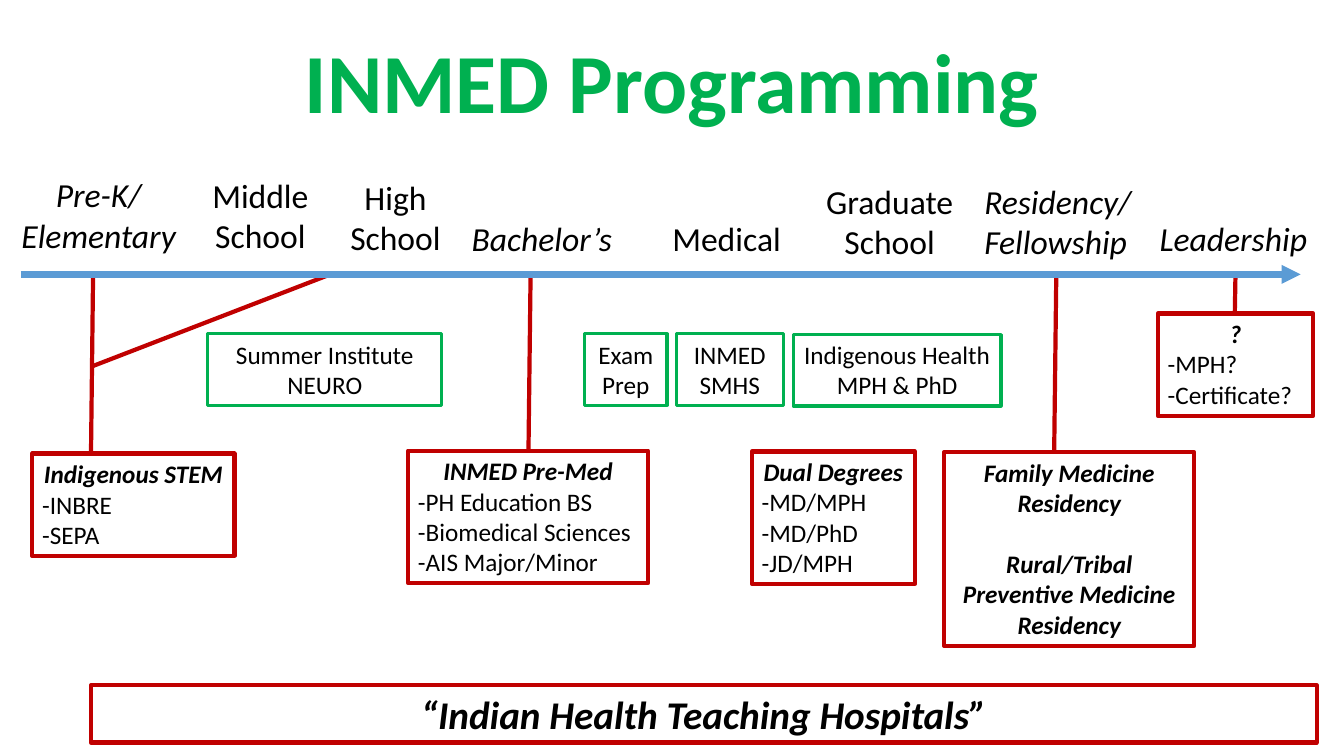
from lxml.etree import SubElement
from pptx import Presentation
from pptx.dml.color import RGBColor
from pptx.enum.shapes import MSO_CONNECTOR, MSO_SHAPE
from pptx.enum.text import MSO_ANCHOR, PP_ALIGN
from pptx.oxml.ns import qn
from pptx.util import Pt

GREEN, RED, BLUE, BLACK, WHITE = "00B050", "C00000", "5B9BD5", "000000", "FFFFFF"
CENTER, LEFT = PP_ALIGN.CENTER, PP_ALIGN.LEFT
AXIS_Y = 196

# Career stages above the axis: text, left, top, width, italic, alignment
STAGES = [
    ("Pre-K/ Elementary", 6.5, 121, 128, True, CENTER),
    ("Middle School", 137.5, 121.5, 97, False, CENTER),
    ("High School", 241, 122.5, 83, False, CENTER),
    ("Bachelor’s", 327, 152, 120, True, CENTER),
    ("Medical", 464, 152, 110, False, CENTER),
    ("Graduate School", 582.5, 125.5, 106, False, CENTER),
    ("Residency/Fellowship", 696, 125.5, 128, True, LEFT),
    ("Leadership", 816, 152, 130, True, CENTER),
]

# Existing programs in green: lines, left, top, width
PROGRAMS = [
    (["Summer Institute", "NEURO"], 148.5, 238.5, 167),
    (["Exam", "Prep"], 417.5, 238.5, 59),
    (["INMED", "SMHS"], 483, 238.5, 76.5),
    (["Indigenous Health MPH & PhD"], 566.5, 239, 148.5),
]

# Tracks in red: heading, items, left, top, width, height
TRACKS = [
    ("Indigenous STEM", ["-INBRE", "-SEPA"], 23, 324, 144.5, 73),
    ("INMED Pre-Med", ["-PH Education BS", "-Biomedical Sciences", "-AIS Major/Minor"],
     291.5, 322, 171.5, 94.5),
    ("Dual Degrees", ["-MD/MPH", "-MD/PhD", "-JD/MPH"], 537, 322.5, 116.5, 94.5),
    ("?", ["-MPH?", "-Certificate?"], 827, 224, 111, 73),
]

# Red links from the boxes up to the axis: x1, y1, x2, y2
LINKS = [
    (65, 323.5, 66.5, 197),
    (65, 262, 236, 196),
    (377.5, 322, 379, 196),
    (753, 322.5, 754.5, 196.5),
    (882, 224.5, 882.5, 197),
]


def rgb(color):
    return RGBColor.from_string(color)


def write(tf, lines, size, color=BLACK, bold=False, italic=False, align=CENTER):
    tf.word_wrap = True
    tf.text = "\n".join(lines)
    for p in tf.paragraphs:
        p.alignment = align
        for r in p.runs:
            font = r.font
            font.name, font.size = "Calibri", Pt(size)
            font.bold, font.italic = bold, italic
            font.color.rgb = rgb(color)


def add_label(s, text, left, top, width, height, size, **style):
    sp = s.shapes.add_textbox(Pt(left), Pt(top), Pt(width), Pt(height))
    write(sp.text_frame, [text], size, **style)
    return sp.text_frame


def add_box(s, lines, left, top, width, height, color, weight, size=18, **style):
    sp = s.shapes.add_shape(MSO_SHAPE.RECTANGLE, Pt(left), Pt(top), Pt(width), Pt(height))
    sp.shadow.inherit = False
    sp.fill.background()
    sp.line.color.rgb = rgb(color)
    sp.line.width = Pt(weight)
    tf = sp.text_frame
    tf.vertical_anchor = MSO_ANCHOR.TOP
    write(tf, lines, size, **style)
    return sp


def add_track(s, heading, items, left, top, width, height):
    sp = add_box(s, [heading] + items, left, top, width, height, RED, 3)
    heading_p, *item_ps = sp.text_frame.paragraphs
    for r in heading_p.runs:
        r.font.bold = r.font.italic = True
    for p in item_ps:
        p.alignment = LEFT


def add_line(s, x1, y1, x2, y2, color, weight, arrow=False):
    line = s.shapes.add_connector(MSO_CONNECTOR.STRAIGHT, Pt(x1), Pt(y1), Pt(x2), Pt(y2))
    line.line.color.rgb = rgb(color)
    line.line.width = Pt(weight)
    if arrow:
        SubElement(line.line._get_or_add_ln(), qn("a:tailEnd"), type="triangle")
    SubElement(line._element.spPr, qn("a:effectLst"))


def main():
    prs = Presentation()
    prs.slide_width, prs.slide_height = Pt(960), Pt(540)
    s = prs.slides.add_slide(prs.slide_layouts[6])

    # Title
    tf = add_label(s, "INMED Programming", 120, 16.5, 720, 81, 60, color=GREEN, bold=True)
    tf.vertical_anchor = MSO_ANCHOR.BOTTOM
    tf.paragraphs[0].line_spacing = 0.9

    # Timeline
    for text, left, top, width, italic, align in STAGES:
        height = 65 if top < 150 else 36
        add_label(s, text, left, top, width, height, 24, italic=italic, align=align)
    for link in LINKS:
        add_line(s, *link, RED, 3)
    add_line(s, 15, AXIS_Y, 929, AXIS_Y, BLUE, 4.5, arrow=True)

    # Programs and tracks
    for lines, left, top, width in PROGRAMS:
        add_box(s, lines, left, top, width, 51, GREEN, 2.25)
    for track in TRACKS:
        add_track(s, *track)

    # Residencies
    sp = add_box(s, ["Family Medicine Residency", "Rural/Tribal Preventive Medicine Residency"],
                 674.5, 323, 178.5, 138.5, RED, 3, bold=True, italic=True)
    sp.fill.solid()
    sp.fill.fore_color.rgb = rgb(WHITE)
    sp.text_frame.paragraphs[1].space_before = Pt(22)

    # Foundation bar
    add_box(s, ["“Indian Health Teaching Hospitals”"], 65, 489.5, 875.5, 41, RED, 3,
            size=28, bold=True, italic=True)

    prs.save("out.pptx")


if __name__ == "__main__":
    main()
